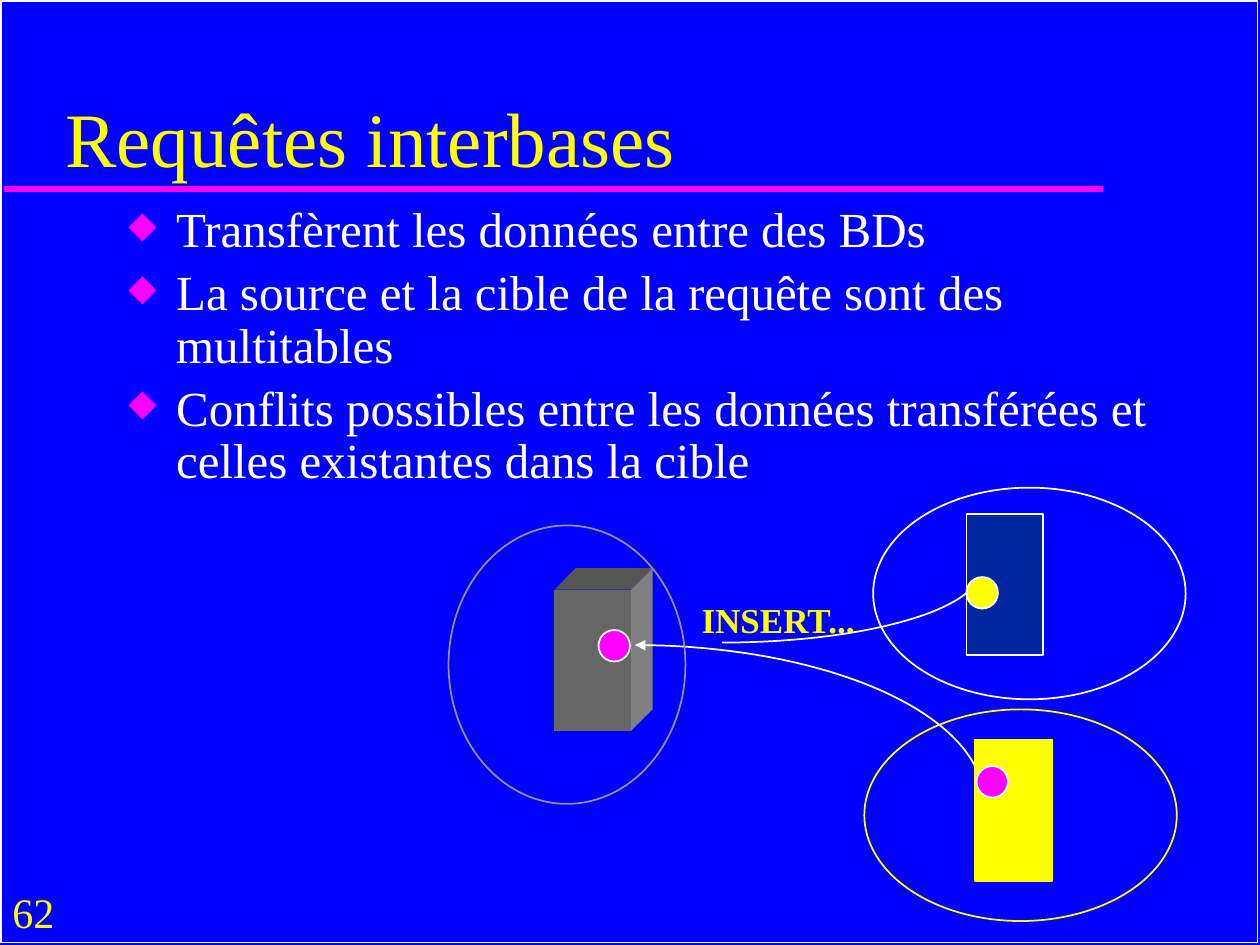
from math import cos, pi, sin

from lxml import etree
from pptx import Presentation
from pptx.dml.color import RGBColor
from pptx.enum import shapes, text
from pptx.oxml.ns import qn
from pptx.util import Inches, Pt

BLUE = RGBColor(0x00, 0x00, 0xFF)
NAVY = RGBColor(0x00, 0x27, 0x9F)
WHITE = RGBColor(0xFF, 0xFF, 0xFF)
YELLOW = RGBColor(0xFF, 0xFF, 0x00)
MAGENTA = RGBColor(0xFF, 0x00, 0xFF)
GREY = RGBColor(0x91, 0x91, 0x91)
FRONT_GREY = RGBColor(0x66, 0x66, 0x66)
SIDE_GREY = RGBColor(0x80, 0x80, 0x80)
TOP_GREY = RGBColor(0x55, 0x55, 0x55)

RECT = shapes.MSO_SHAPE.RECTANGLE
OVAL = shapes.MSO_SHAPE.OVAL


def write(box, lines, size, color, bold=False, anchor=text.MSO_ANCHOR.TOP, wrap=True):
    """Fill the frame of box with one left-aligned paragraph per line."""
    frame = box.text_frame
    frame.word_wrap = wrap
    frame.vertical_anchor = anchor
    frame.auto_size = text.MSO_AUTO_SIZE.NONE
    for index, line in enumerate(lines):
        para = frame.paragraphs[0] if index == 0 else frame.add_paragraph()
        para.alignment = text.PP_ALIGN.LEFT
        span = para.add_run()
        span.text = line
        span.font.name = "Times New Roman"
        span.font.size = Pt(size)
        span.font.bold = bold
        span.font.color.rgb = color
    return frame.paragraphs


def paint(shape, fill=None, line=None):
    shape.shadow.inherit = False
    for part, color in ((shape.fill, fill), (shape.line.fill, line)):
        if color is None:
            part.background()
        else:
            part.solid()
            part.fore_color.rgb = color
    if line is not None:
        shape.line.width = Pt(1)
    return shape


deck = Presentation()
deck.slide_width, deck.slide_height = Inches(10), Inches(7.5)
page = deck.slides.add_slide(deck.slide_layouts[5])
page.background.fill.solid()
page.background.fill.fore_color.rgb = BLUE

# Frame, title rule and page number
frame_box = page.shapes.add_shape(RECT, Inches(0.01), Inches(0.01), Inches(9.97), Inches(7.47))
paint(frame_box, line=WHITE)
rule = page.shapes.add_connector(
    shapes.MSO_CONNECTOR.STRAIGHT, Inches(0.03), Inches(1.5), Inches(8.75), Inches(1.5))
rule.line.color.rgb = MAGENTA
rule.line.width = Pt(4)
etree.SubElement(rule._element.spPr, qn("a:effectLst"))
number = page.shapes.add_textbox(Inches(0), Inches(6.99), Inches(0.59), Inches(0.5))
write(number, ["62"], 24, YELLOW, wrap=False)

# Title and bullets
title = page.shapes.title
title.left, title.top = Inches(0.42), Inches(0.29)
title.width, title.height = Inches(8.5), Inches(1.21)
write(title, ["Requêtes interbases"], 44, YELLOW, anchor=text.MSO_ANCHOR.BOTTOM)

body = page.shapes.add_textbox(Inches(0.92), Inches(1.58), Inches(8.45), Inches(2.3))
points = [
    "Transfèrent les données entre des BDs",
    "La source et la cible de la requête sont des multitables",
    "Conflits possibles entre les données transférées et celles existantes dans la cible",
]
for para in write(body, points, 28, WHITE):
    para.line_spacing = 0.9
    para.space_before = Pt(5.6)
    props = para._p.get_or_add_pPr()
    props.set("marL", str(Inches(0.38)))
    props.set("indent", str(-Inches(0.38)))
    bullet_color = etree.SubElement(props, qn("a:buClr"))
    etree.SubElement(bullet_color, qn("a:srgbClr"), val=str(MAGENTA))
    etree.SubElement(props, qn("a:buSzPct"), val="75000")
    etree.SubElement(props, qn("a:buChar"), char="◆")

# Target table as a block: front, top and side faces
left, top, right, bottom, depth = 4.4, 4.68, 5.01, 5.8, 0.17
faces = [
    (FRONT_GREY, [(left, top), (right, top), (right, bottom), (left, bottom)]),
    (TOP_GREY, [(left, top), (left + depth, top - depth),
                (right + depth, top - depth), (right, top)]),
    (SIDE_GREY, [(right, top), (right + depth, top - depth),
                 (right + depth, bottom - depth), (right, bottom)]),
]
for color, corners in faces:
    outline = [(Inches(x), Inches(y)) for x, y in corners]
    builder = page.shapes.build_freeform(*outline[0])
    builder.add_line_segments(outline[1:], close=True)
    paint(builder.convert_to_shape(), fill=color)

# Transfer curves: quarter ellipses as (centre x, centre y, radius x, radius y)
STEPS = 40
curves = []
for cx, cy, rx, ry in [(5.04, 6.36, 2.77, -1.24), (5.73, 4.51, 2.06, 0.59)]:
    angles = [pi / 2 * (1 - step / STEPS) for step in range(STEPS + 1)]
    outline = [(Inches(cx + rx * cos(a)), Inches(cy + ry * sin(a))) for a in angles]
    builder = page.shapes.build_freeform(*outline[0])
    builder.add_line_segments(outline[1:], close=False)
    curves.append(paint(builder.convert_to_shape(), line=WHITE))
etree.SubElement(curves[0].line._get_or_add_ln(), qn("a:headEnd"), type="triangle")

# Source tables, then the databases around all tables
for x, y, fill, line in [(7.74, 5.87, YELLOW, YELLOW), (7.67, 4.08, NAVY, WHITE)]:
    table_box = page.shapes.add_shape(RECT, Inches(x), Inches(y), Inches(0.61), Inches(1.12))
    paint(table_box, fill, line)
for x, y, width, height, line in [
    (3.56, 4.17, 1.88, 2.21, GREY),
    (6.93, 3.87, 2.48, 1.68, WHITE),
    (6.86, 5.63, 2.48, 1.68, YELLOW),
]:
    database = page.shapes.add_shape(OVAL, Inches(x), Inches(y), Inches(width), Inches(height))
    paint(database, line=line)

label = page.shapes.add_textbox(Inches(5.47), Inches(4.7), Inches(1.44), Inches(0.43))
write(label, ["INSERT..."], 20, YELLOW, bold=True, wrap=False)

for x, y, fill in [(4.75, 5, MAGENTA), (7.75, 6.08, MAGENTA), (7.67, 4.58, YELLOW)]:
    record = page.shapes.add_shape(OVAL, Inches(x), Inches(y), Inches(0.25), Inches(0.25))
    paint(record, fill, WHITE)

deck.save("out.pptx")
